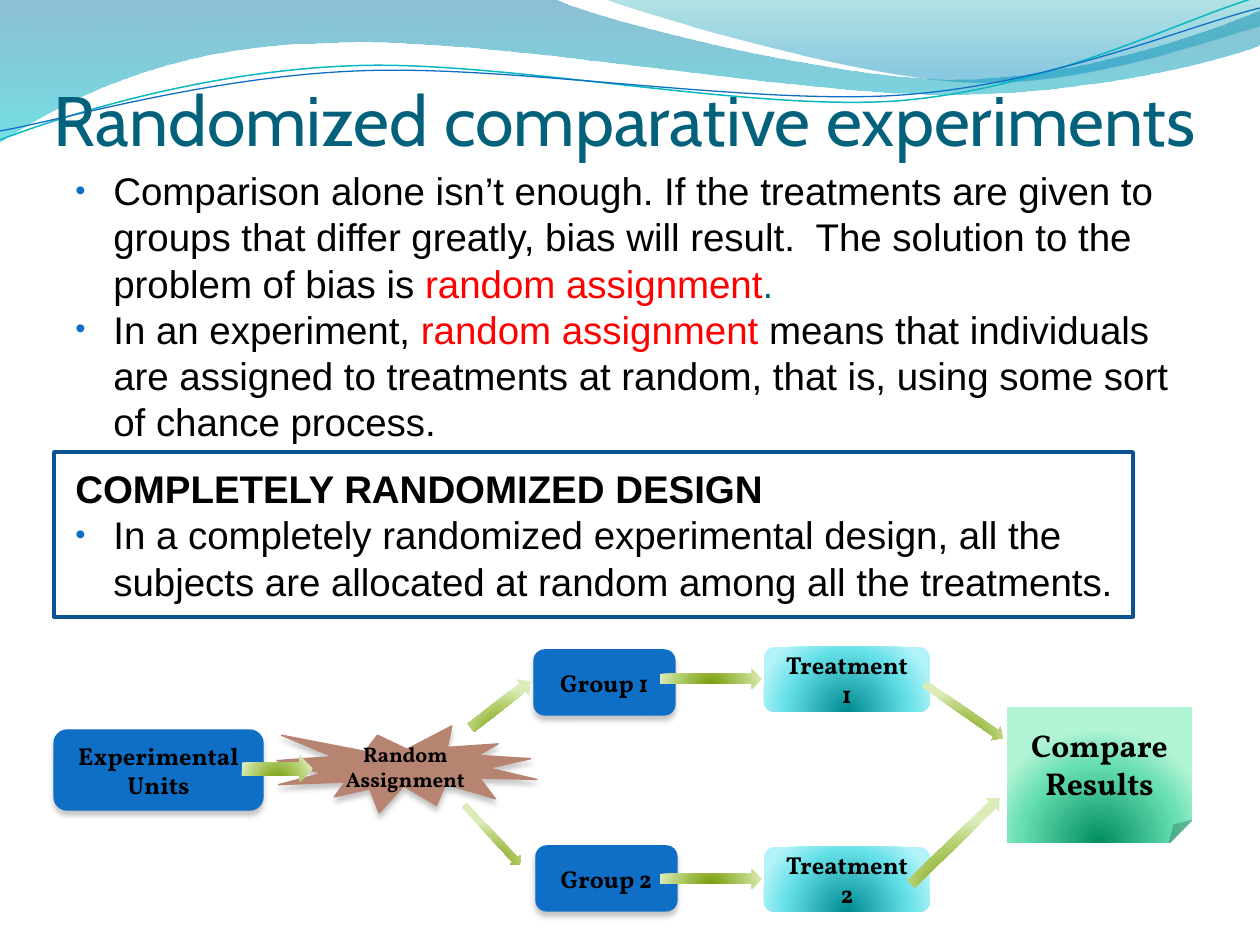
from math import cos, radians, sin

from lxml.etree import SubElement
from pptx import Presentation
from pptx.dml.color import RGBColor
from pptx.enum.shapes import MSO_SHAPE
from pptx.enum.text import MSO_ANCHOR, PP_ALIGN
from pptx.oxml.ns import qn
from pptx.util import Emu, Pt

COLORS = {
    "black": "000000", "red": "FF0000", "title": "04617B", "blue": "0F6FC6",
    "navy": "0B5292", "brown": "B88472", "teal": "0AB8BF", "gray": "808080",
}
GLOWS = {
    "green": ("729800", "B8D275", "DBECB9"),
    "cyan": ("008A91", "64DFE7", "B1F3F9"),
    "mint": ("008C60", "65DEB0", "B2F4D6"),
}
WAVES = [
    ([(0, "0074A1", 45), (100, "00C6CF", 55)], (0, 0), [
        [(554, -1)],
        [(600, 21), (837, 79), (955, 79)],
        [(1075, 79), (1207, 33), (1260, 11)],
        [(1261, 45)],
        [(1239, 55), (1096, 96), (940, 94)],
        [(784, 94), (481, 35), (324, 43)],
        [(163, 45), (58, 105), (-1, 142)],
        [(0, 0)],
    ]),
    ([(0, "00A1A9", 30), (80, "008BBF", 45)], (604, -1), [
        [(641, 14), (859, 78), (969, 82)],
        [(1079, 87), (1211, 40), (1260, 26)],
        [(1260, 0)],
        [(604, -1)],
    ]),
]
RIPPLES = [
    ("teal", 0.85, (0, 140), [
        [(60, 117), (199, 72), (349, 66)],
        [(498, 59), (747, 112), (898, 101)],
        [(1049, 89), (1182, 19), (1258, -3)],
    ]),
    ("blue", 0.75, (0, 131), [
        [(59, 121), (207, 77), (357, 71)],
        [(508, 64), (752, 106), (903, 95)],
        [(1053, 84), (1187, 26), (1260, 8)],
    ]),
]
TILT = 2.7
RIPPLE_CENTER = (630, 72)

TITLE = "Randomized comparative experiments"
BODY = [
    (True, 0, [
        ("Comparison alone isn’t enough. If the treatments are given to groups that differ "
         "greatly, bias will result.  The solution to the problem of bias is ", "black", False),
        ("random assignment", "red", False),
        (".", "title", False)]),
    (True, 12, [
        ("In an experiment, ", "black", False),
        ("random assignment", "red", False),
        (" means that individuals are assigned to treatments at random, that is, "
         "using some sort of chance process.", "black", False)]),
    (False, 0, [("COMPLETELY RANDOMIZED DESIGN", "black", True)]),
    (True, 0, [
        ("In a completely randomized experimental design, all the subjects are allocated "
         "at random among all the treatments.", "black", False)]),
]
ROUND, ARROW = MSO_SHAPE.ROUNDED_RECTANGLE, MSO_SHAPE.RIGHT_ARROW
DIAGRAM = [
    (ROUND, (54, 730, 209, 80), 0, "blue", "Experimental Units", 14),
    (MSO_SHAPE.EXPLOSION1, (277, 726, 260, 87), 0, "brown", "Random Assignment", 12),
    (ARROW, (242, 756, 71, 26), 0, "green", "", 0),
    (ROUND, (534, 650, 141, 65), 0, "blue", "Group 1", 14),
    (ROUND, (536, 846, 141, 65), 0, "blue", "Group 2", 14),
    (ARROW, (463, 694, 76, 21), 322.1, "green", "", 0),
    (ARROW, (451, 828, 82, 14), 47.1, "green", "", 0),
    (ARROW, (660, 669, 102, 20), 0, "green", "", 0),
    (ARROW, (660, 869, 102, 20), 0, "green", "", 0),
    (ROUND, (764, 647, 166, 65), 0, "cyan", "Treatment 1", 14),
    (ROUND, (764, 847, 166, 65), 0, "cyan", "Treatment 2", 14),
    (ARROW, (894, 831, 123, 20), 315.8, "green", "", 0),
    (ARROW, (916, 703, 95, 16), 34.7, "green", "", 0),
    (MSO_SHAPE.FOLDED_CORNER, (1007, 707, 185, 136), 0, "mint", "Compare Results", 18),
]


def px(value):
    return Emu(round(value * 914400 / 126))


def rgb(name):
    return RGBColor.from_string(COLORS[name])


def add_color(parent, color, alpha=100):
    node = SubElement(parent, qn("a:srgbClr"), val=color)
    if alpha < 100:
        SubElement(node, qn("a:alpha"), val=str(alpha * 1000))


def set_gradient(shape, stops, circular):
    shape.fill.background()
    properties = shape._element.spPr
    gradient = SubElement(properties, qn("a:gradFill"), rotWithShape="1")
    properties.replace(properties.find(qn("a:noFill")), gradient)
    stop_list = SubElement(gradient, qn("a:gsLst"))
    for position, color, alpha in stops:
        add_color(SubElement(stop_list, qn("a:gs"), pos=str(position * 1000)), color, alpha)
    if circular:
        center = SubElement(gradient, qn("a:path"), path="circle")
        SubElement(center, qn("a:fillToRect"), l="50000", t="130000", r="50000", b="-30000")
    else:
        SubElement(gradient, qn("a:lin"), ang="5400000", scaled="1")


def set_shadow(shape):
    effects = shape._element.spPr.find(qn("a:effectLst"))
    shadow = SubElement(effects, qn("a:outerShdw"), blurRad=str(Pt(3)),
                        dist=str(Pt(2.4)), dir="5400000", rotWithShape="0")
    add_color(shadow, COLORS["gray"], 45)


def set_line(shape, color, width):
    shape.line.color.rgb = rgb(color)
    shape.line.width = Pt(width)


def add_span(para, text, font, size, color, bold=False):
    span = para.add_run()
    span.text = text
    span.font.name, span.font.size, span.font.bold = font, Pt(size), bold
    span.font.color.rgb = rgb(color)


def level(point):
    dx, dy = point[0] - RIPPLE_CENTER[0], point[1] - RIPPLE_CENTER[1]
    turn = radians(TILT)
    return (RIPPLE_CENTER[0] + dx * cos(turn) - dy * sin(turn),
            RIPPLE_CENTER[1] + dx * sin(turn) + dy * cos(turn))


def add_outline(page, start, segments, close):
    points = [start] + [point for segment in segments for point in segment]
    corners = [(px(x), px(y)) for x, y in points]
    builder = page.shapes.build_freeform(*corners[0])
    builder.add_line_segments(corners[1:], close=close)
    shape = builder.convert_to_shape()
    shape.shadow.inherit = False
    outline = next(shape._element.iter(qn("a:path")))
    lines = iter(outline.findall(qn("a:lnTo")))
    for segment in segments:
        parts = [next(lines) for _ in segment]
        if len(parts) == 3:
            curve = SubElement(outline, qn("a:cubicBezTo"))
            parts[0].addprevious(curve)
            for part in parts:
                curve.append(part[0])
                outline.remove(part)
    return shape


def add_text_box(page, place):
    box = page.shapes.add_textbox(*map(px, place))
    box.text_frame.word_wrap = True
    return box.text_frame


def add_shape(page, kind, place):
    shape = page.shapes.add_shape(kind, *map(px, place))
    shape.shadow.inherit = False
    return shape


def add_body(page):
    frame = add_text_box(page, (54, 161, 1135, 537))
    for index, (bulleted, space, spans) in enumerate(BODY):
        para = frame.paragraphs[0] if index == 0 else frame.add_paragraph()
        para.space_after = Pt(space)
        properties = para._p.get_or_add_pPr()
        properties.set("marL", str(px(47 if bulleted else 9)))
        properties.set("indent", str(px(-38 if bulleted else 0)))
        if bulleted:
            add_color(SubElement(properties, qn("a:buClr")), COLORS["blue"])
            SubElement(properties, qn("a:buSzPct"), val="76000")
            SubElement(properties, qn("a:buFont"), typeface="Arial")
            SubElement(properties, qn("a:buChar"), char="•")
        for text, color, bold in spans:
            add_span(para, text, "Arial", 22, color, bold)


def add_step(page, kind, place, rotation, style, text, size):
    shape = add_shape(page, kind, place)
    shape.rotation = rotation
    if style in GLOWS:
        stops = [(position, tone, 100) for position, tone in zip((0, 68, 100), GLOWS[style])]
        set_gradient(shape, stops, True)
        shape.line.fill.background()
    else:
        shape.fill.solid()
        shape.fill.fore_color.rgb = rgb(style)
        set_line(shape, style, 0.79)
        set_shadow(shape)
    if text:
        shape.text_frame.vertical_anchor = MSO_ANCHOR.MIDDLE
        para = shape.text_frame.paragraphs[0]
        para.alignment = PP_ALIGN.CENTER
        add_span(para, text, "Vollkorn", size, "black", True)


def main():
    deck = Presentation()
    deck.slide_width, deck.slide_height = px(1260), px(945)
    page = deck.slides.add_slide(deck.slide_layouts[6])
    for stops, start, segments in WAVES:
        wave = add_outline(page, start, segments, True)
        set_gradient(wave, stops, False)
        wave.line.fill.background()
    for color, width, start, segments in RIPPLES:
        leveled = [[level(point) for point in segment] for segment in segments]
        ripple = add_outline(page, level(start), leveled, False)
        ripple.fill.background()
        set_line(ripple, color, width)
        ripple.rotation = 360 - TILT
    frame = add_text_box(page, (54, 17, 1183, 145))
    frame.vertical_anchor = MSO_ANCHOR.BOTTOM
    frame.margin_left = frame.margin_right = frame.margin_bottom = 0
    frame.paragraphs[0].line_spacing = 0.9
    add_span(frame.paragraphs[0], TITLE, "Cabin", 40, "title")
    add_body(page)
    for step in DIAGRAM:
        add_step(page, *step)
    border = add_shape(page, MSO_SHAPE.RECTANGLE, (54, 452, 1079, 165))
    border.fill.background()
    set_line(border, "navy", 2)
    deck.save("out.pptx")


if __name__ == "__main__":
    main()
